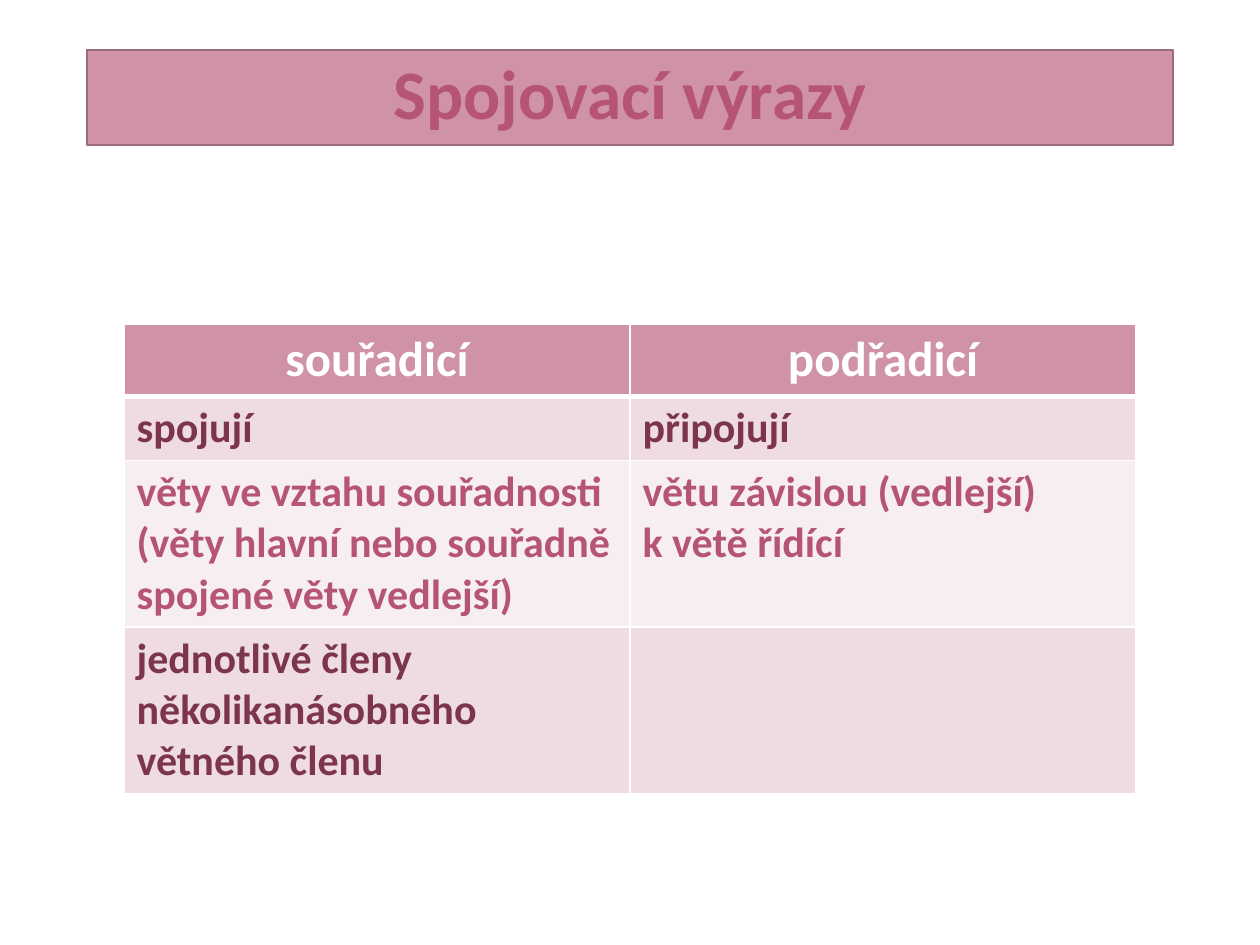
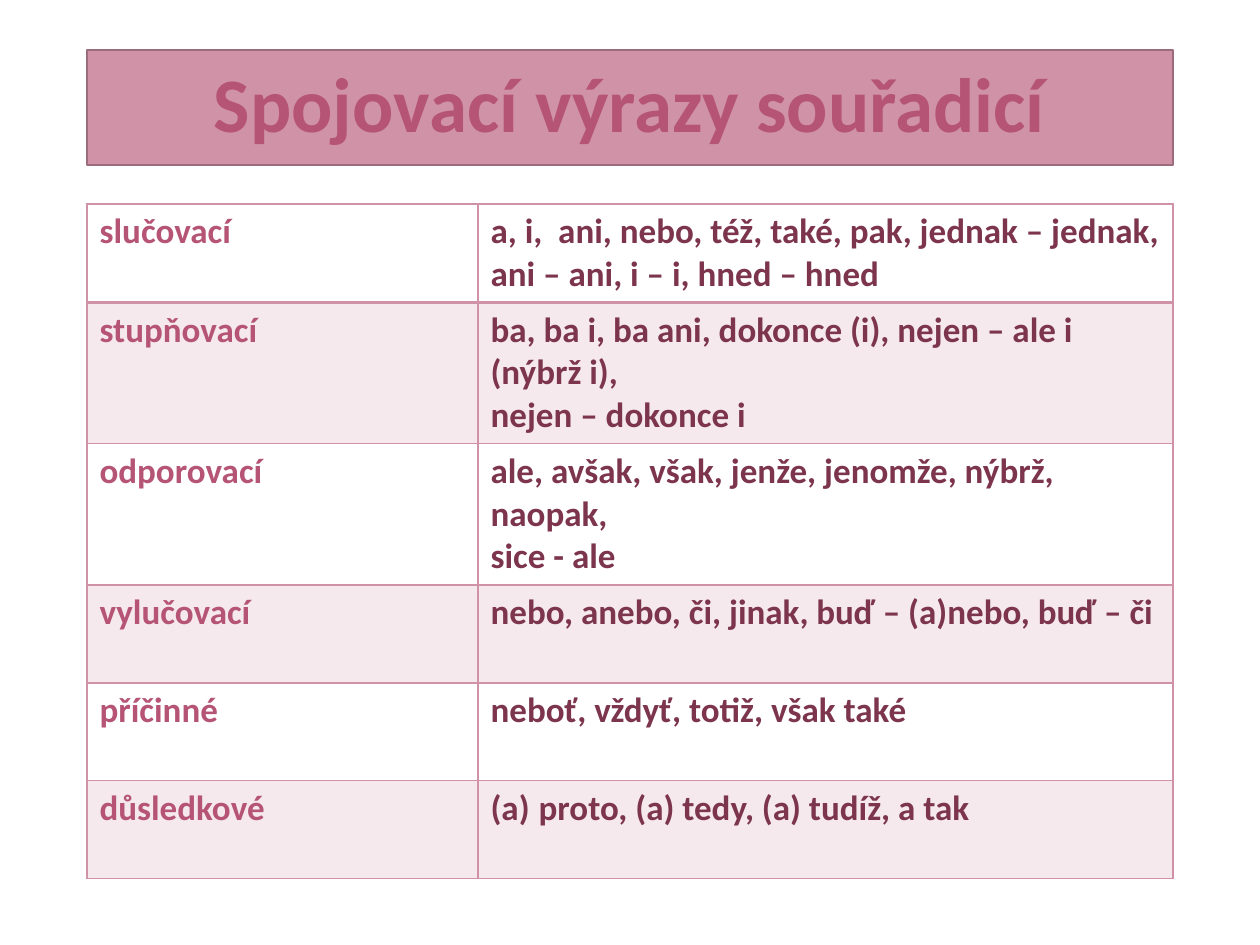
from lxml import etree
from pptx import Presentation
from pptx.dml.color import RGBColor
from pptx.enum.text import MSO_ANCHOR, MSO_AUTO_SIZE, PP_ALIGN
from pptx.oxml.ns import qn
from pptx.util import Emu, Pt

CENTER, LEFT = PP_ALIGN.CENTER, PP_ALIGN.LEFT
MIDDLE = MSO_ANCHOR.MIDDLE
NO_FIT = MSO_AUTO_SIZE.NONE

FONT = "Calibri"
ROSE, ROSE_EDGE = "D092A7", "9A6C7C"
RASPBERRY, WINE = "B55475", "7C354D"
BAND_DARK, BAND_LIGHT = "EEDCE1", "F7EEF1"
WHITE = "FFFFFF"

TITLE_LEFT, TITLE_TOP, TITLE_WIDTH = 87, 50, 1086
TITLE_ONLY_LAYOUT = 5


def px(length):
    """126 px make one inch."""
    return Emu(round(length * 914400 / 126))


def rgb(color):
    return RGBColor.from_string(color)


class Deck:
    """Holds the shared style and the current slide."""

    def __init__(self):
        self.presentation = Presentation()
        self.presentation.slide_width = px(1260)
        self.presentation.slide_height = px(945)
        self.slide = None

    def add_slide(self):
        layout = self.presentation.slide_layouts[TITLE_ONLY_LAYOUT]
        self.slide = self.presentation.slides.add_slide(layout)

    def add_run(self, paragraph, text, size, color):
        run = paragraph.add_run()
        run.text = text
        run.font.name = FONT
        run.font.size = Pt(size)
        run.font.bold = True
        run.font.color.rgb = rgb(color)

    def add_title(self, text, height, size):
        shape = self.slide.shapes.title
        shape.left, shape.top = px(TITLE_LEFT), px(TITLE_TOP)
        shape.width, shape.height = px(TITLE_WIDTH), px(height)
        shape.fill.solid()
        shape.fill.fore_color.rgb = rgb(ROSE)
        shape.line.color.rgb = rgb(ROSE_EDGE)
        shape.line.width = Pt(1)
        frame = shape.text_frame
        frame.auto_size = NO_FIT
        frame.word_wrap = True
        frame.vertical_anchor = MIDDLE
        paragraph = frame.paragraphs[0]
        paragraph.alignment = CENTER
        paragraph.line_spacing = 0.9
        self.add_run(paragraph, text, size, RASPBERRY)

    def add_table(self, left, top, columns, rows):
        table = self.slide.shapes.add_table(
            len(rows), len(columns), px(left), px(top),
            px(sum(columns)), px(sum(rows))).table
        table.first_row = table.horz_banding = False
        for column, width in zip(table.columns, columns):
            column.width = px(width)
        for row, height in zip(table.rows, rows):
            row.height = px(height)
        return table

    def add_borders(self, table, color, first_rule):
        """1 pt lines everywhere; first_rule is the width below the first row."""
        for index, row in enumerate(table.rows):
            widths = {"a:lnL": 1, "a:lnR": 1,
                      "a:lnT": first_rule if index == 1 else 1,
                      "a:lnB": first_rule if index == 0 else 1}
            for cell in row.cells:
                properties = cell._tc.get_or_add_tcPr()
                for tag, width in widths.items():
                    line = etree.SubElement(properties, qn(tag), w=str(Pt(width)))
                    fill = etree.SubElement(line, qn("a:solidFill"))
                    etree.SubElement(fill, qn("a:srgbClr"), val=color)

    def fill_cell(self, cell, color, opacity=100):
        if color is None:
            cell.fill.background()
            return
        cell.fill.solid()
        cell.fill.fore_color.rgb = rgb(color)
        if opacity < 100:
            element = cell._tc.tcPr.find(qn("a:solidFill")).find(qn("a:srgbClr"))
            etree.SubElement(element, qn("a:alpha"), val=str(opacity * 1000))

    def write_cell(self, cell, lines, size, color, alignment=LEFT):
        for index, text in enumerate(lines):
            frame = cell.text_frame
            paragraph = frame.add_paragraph() if index else frame.paragraphs[0]
            paragraph.alignment = alignment
            self.add_run(paragraph, text, size, color)

    def number_paragraph(self, paragraph, indent):
        """Letter numbering in parentheses: (a), (b), ..."""
        properties = paragraph._p.get_or_add_pPr()
        properties.set("marL", str(px(indent)))
        properties.set("indent", str(-px(indent)))
        etree.SubElement(properties, qn("a:buFont"), typeface="+mj-lt")
        etree.SubElement(properties, qn("a:buAutoNum"), type="alphaLcParenBoth")


def build_overview(deck):
    deck.add_slide()
    deck.add_title("Spojovací výrazy", 95, 39.6)
    # Each row: fill, text size, text colour, alignment, cells
    rows = [
        (ROSE, 28, WHITE, CENTER, [["souřadicí"], ["podřadicí"]]),
        (BAND_DARK, 24, WINE, LEFT, [["spojují"], ["připojují"]]),
        (BAND_LIGHT, 24, RASPBERRY, LEFT, [
            ["věty ve vztahu souřadnosti",
             "(věty hlavní nebo souřadně spojené věty vedlejší)"],
            ["větu závislou (vedlejší)", "k větě řídící"]]),
        (BAND_DARK, 24, WINE, LEFT, [
            ["jednotlivé členy několikanásobného větného členu"], []]),
    ]
    table = deck.add_table(124, 324, [506, 506], [72, 64, 166, 166])
    deck.add_borders(table, WHITE, 3)
    for row, (fill, size, color, alignment, texts) in zip(table.rows, rows):
        for cell, lines in zip(row.cells, texts):
            deck.fill_cell(cell, fill)
            deck.write_cell(cell, lines, size, color, alignment)


def build_coordinating(deck):
    deck.add_slide()
    deck.add_title("Spojovací výrazy souřadicí", 115, 44)
    relations = [
        ("slučovací", ["a, i,  ani, nebo, též, také, pak, jednak – jednak, "
                       "ani – ani, i – i, hned – hned"]),
        ("stupňovací", ["ba, ba i, ba ani, dokonce (i), nejen – ale i (nýbrž i),",
                        "nejen – dokonce i"]),
        ("odporovací", ["ale, avšak, však, jenže, jenomže, nýbrž, naopak,",
                        "sice - ale"]),
        ("vylučovací", ["nebo, anebo, či, jinak, buď – (a)nebo, buď – či"]),
        ("příčinné", ["neboť, vždyť, totiž, však také"]),
        ("důsledkové", ["proto, (a) tedy, (a) tudíž, a tak"]),
    ]
    # Rows with two paragraphs need three lines of text
    heights = [98 if len(lines) == 1 else 141 for _, lines in relations]
    table = deck.add_table(TITLE_LEFT, 204, [391, 695], heights)
    deck.add_borders(table, ROSE, 2)
    for index, (relation, lines) in enumerate(relations):
        name_cell, words_cell = table.rows[index].cells
        for cell in (name_cell, words_cell):
            deck.fill_cell(cell, ROSE if index % 2 else None, 20)
        deck.write_cell(name_cell, [relation], 20, RASPBERRY)
        deck.write_cell(words_cell, lines, 20, WINE)
    # The last list of words opens with the marker (a)
    deck.number_paragraph(words_cell.text_frame.paragraphs[0], 48)


def main():
    deck = Deck()
    build_overview(deck)
    build_coordinating(deck)
    deck.presentation.save("out.pptx")


if __name__ == "__main__":
    main()
